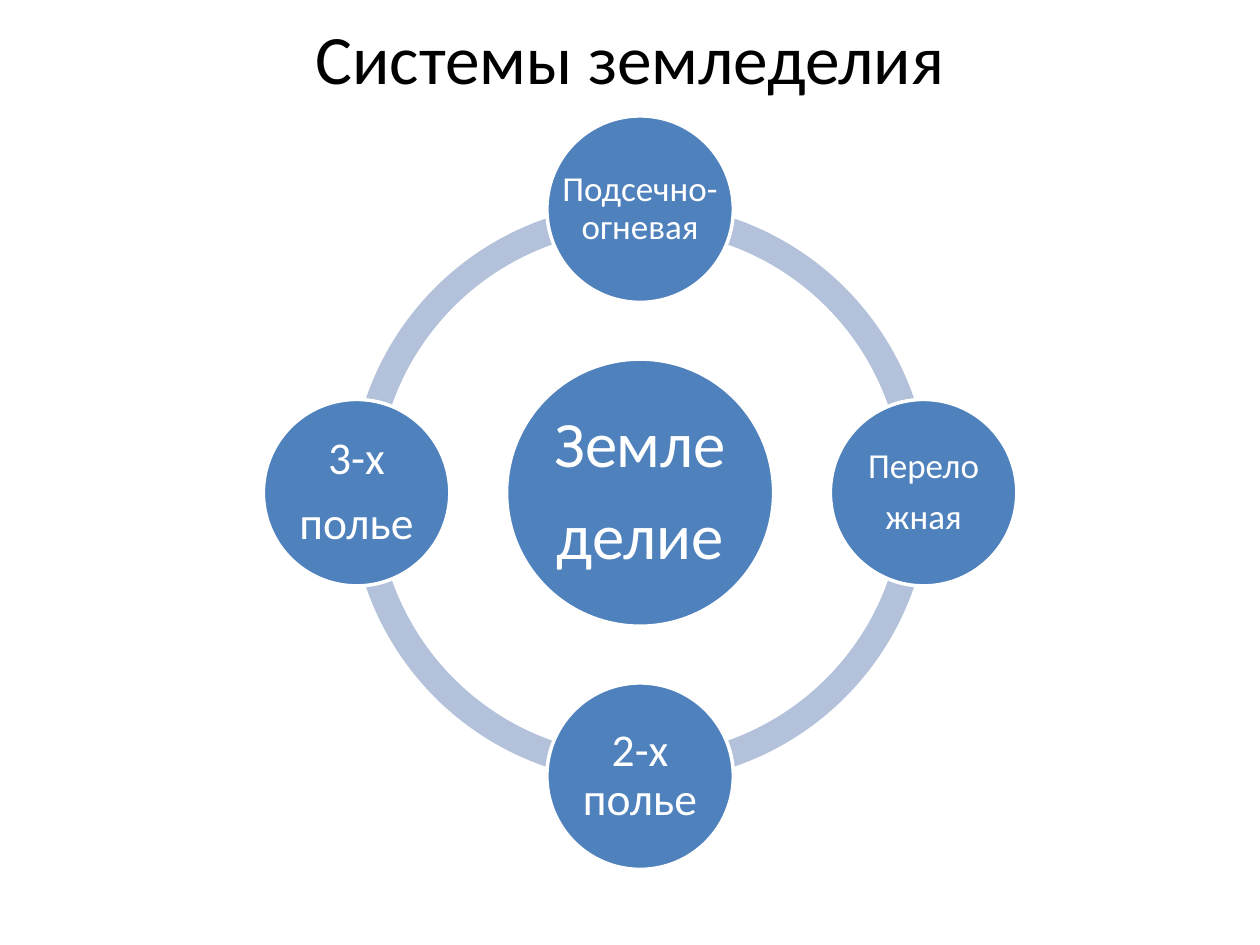
from dataclasses import dataclass

from pptx import Presentation
from pptx.dml.color import RGBColor
from pptx.enum.shapes import MSO_SHAPE
from pptx.enum.text import MSO_ANCHOR, PP_ALIGN
from pptx.slide import Slide
from pptx.util import Inches, Pt


@dataclass(frozen=True)
class Theme:
    font: str = "Calibri"
    title_color: RGBColor = RGBColor(0, 0, 0)
    node_fill: RGBColor = RGBColor(0x4F, 0x81, 0xBD)
    ring_fill: RGBColor = RGBColor(0xB3, 0xC1, 0xDB)
    white: RGBColor = RGBColor(255, 255, 255)
    title_size: float = 39.6
    hub_size: float = 37
    large_size: float = 26
    small_size: float = 20
    line_spacing: float = 0.9
    space_after: float = 0.35  # share of the type size


@dataclass(frozen=True)
class Node:
    lines: tuple[str, ...]
    direction: tuple[int, int]  # steps right and down from the hub
    diameter: float
    size: float
    inset: float


THEME = Theme()
CENTER_X, CENTER_Y = 5.08, 3.91
ORBIT = 2.25
RING_DIAMETER = 4.6
RING_THICKNESS = 0.046
# A block arc's angle of 90 degrees, in units of 100000 / 60000 degree
QUARTER_TURN = 54
ARC_STARTS = (2, 1, 0, 3)
HUB_DIAMETER, NODE_DIAMETER = 2.12, 1.48

NODES = (
    Node(("Земле", "делие"), (0, 0), HUB_DIAMETER, THEME.hub_size, 0.05),
    Node(("Подсечно-огневая",), (0, -1), NODE_DIAMETER, THEME.small_size, 0.03),
    Node(("Перело", "жная"), (1, 0), NODE_DIAMETER, THEME.small_size, 0.03),
    Node(("2-х полье",), (0, 1), NODE_DIAMETER, THEME.large_size, 0.04),
    Node(("3-х", "полье"), (-1, 0), NODE_DIAMETER, THEME.large_size, 0.04),
)


def square_around(x: float, y: float, side: float) -> tuple[Inches, ...]:
    """Return left, top, width and height of a square centred on a point."""
    return Inches(x - side / 2), Inches(y - side / 2), Inches(side), Inches(side)


def add_text(slide: Slide, box: tuple[Inches, ...], lines: tuple[str, ...],
             size: float, color: RGBColor, inset: float,
             line_spacing: float = 1.0, space_after: float = 0) -> None:
    frame = slide.shapes.add_textbox(*box).text_frame
    frame.word_wrap = True
    frame.vertical_anchor = MSO_ANCHOR.MIDDLE
    frame.margin_left = frame.margin_right = Inches(inset)
    frame.margin_top = frame.margin_bottom = Inches(inset)
    frame.text = "\n".join(lines)
    for paragraph in frame.paragraphs:
        paragraph.alignment = PP_ALIGN.CENTER
        paragraph.line_spacing = line_spacing
        paragraph.space_after = Pt(space_after * size)
        paragraph.font.name = THEME.font
        paragraph.font.size = Pt(size)
        paragraph.font.color.rgb = color


def add_ring_quarter(slide: Slide, start: int) -> None:
    box = square_around(CENTER_X, CENTER_Y, RING_DIAMETER)
    arc = slide.shapes.add_shape(MSO_SHAPE.BLOCK_ARC, *box)
    arc.adjustments[0] = start * QUARTER_TURN
    arc.adjustments[1] = (start + 1) % 4 * QUARTER_TURN
    arc.adjustments[2] = RING_THICKNESS
    arc.shadow.inherit = False
    arc.fill.solid()
    arc.fill.fore_color.rgb = THEME.ring_fill
    arc.line.fill.background()


def add_node(slide: Slide, node: Node) -> None:
    """Draw a circle and its label, which spans the circle's full width."""
    right, down = node.direction
    box = square_around(CENTER_X + right * ORBIT, CENTER_Y + down * ORBIT, node.diameter)
    circle = slide.shapes.add_shape(MSO_SHAPE.OVAL, *box)
    circle.shadow.inherit = False
    circle.fill.solid()
    circle.fill.fore_color.rgb = THEME.node_fill
    circle.line.color.rgb = THEME.white
    circle.line.width = Pt(2)
    add_text(slide, box, node.lines, node.size, THEME.white, node.inset,
             THEME.line_spacing, THEME.space_after)


def main() -> None:
    presentation = Presentation()
    presentation.slide_width = Inches(10)
    presentation.slide_height = Inches(7.5)
    slide = presentation.slides.add_slide(presentation.slide_layouts[6])
    title_box = (Inches(0.5), Inches(0.3), Inches(9), Inches(0.3))
    add_text(slide, title_box, ("Системы земледелия",), THEME.title_size,
             THEME.title_color, 0.05)
    for start in ARC_STARTS:
        add_ring_quarter(slide, start)
    for node in NODES:
        add_node(slide, node)
    presentation.save("out.pptx")


if __name__ == "__main__":
    main()
